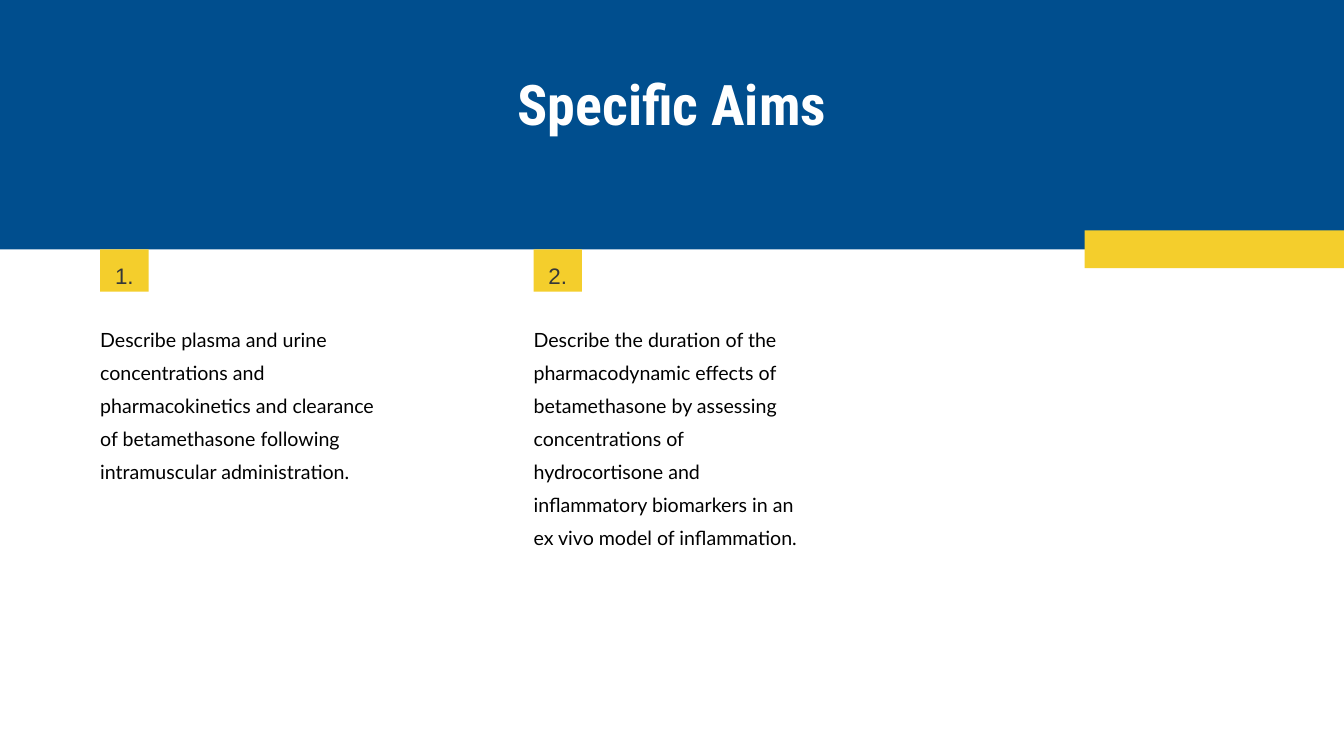
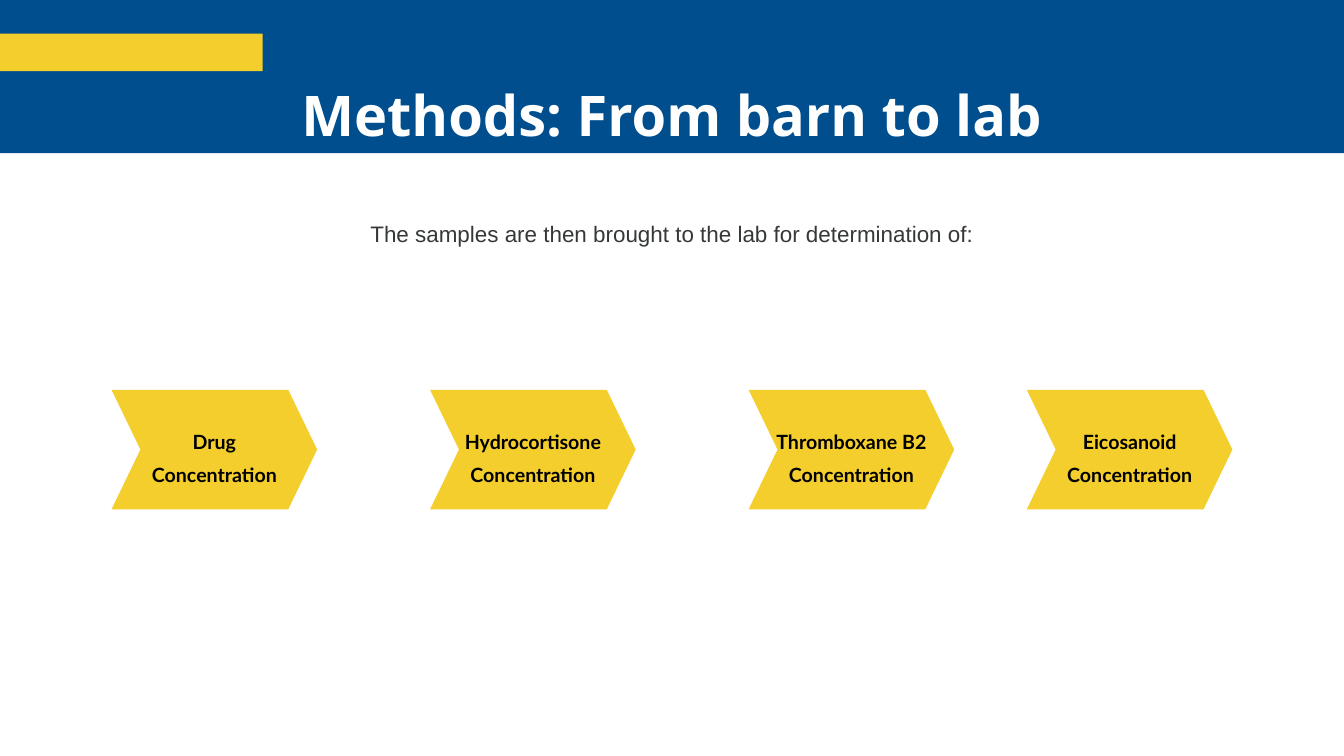
import pptx
import pptx.util
import pptx.dml.color
import pptx.enum.shapes
import pptx.enum.text
from dataclasses import dataclass

Inches = pptx.util.Inches
Shape = pptx.enum.shapes.MSO_SHAPE
Align = pptx.enum.text.PP_ALIGN
Anchor = pptx.enum.text.MSO_ANCHOR
AutoSize = pptx.enum.text.MSO_AUTO_SIZE


@dataclass(frozen=True)
class Theme:
    blue: str = "004E8E"
    yellow: str = "F4CE2C"
    white: str = "FFFFFF"
    black: str = "000000"
    charcoal: str = "353839"
    title_size: int = 60
    lead_size: int = 24
    body_size: int = 21
    lead_font: str = "Arial"
    body_font: str = "Lato"
    line_spacing: float = 1.4


THEME = Theme()
SLIDE_WIDTH, SLIDE_HEIGHT = 20, 11.25
ACCENT_WIDTH, ACCENT_HEIGHT = 3.91, 0.56

TITLE = {"size": THEME.title_size, "bold": True, "color": THEME.white}
LEAD = {"size": THEME.lead_size, "name": THEME.lead_font, "color": THEME.charcoal}
BODY = {"size": THEME.body_size, "name": THEME.body_font, "color": THEME.black}
STEP = {**BODY, "bold": True}

AIMS = [
    (1.49, 2.33, "Describe plasma and urine concentrations and pharmacokinetics "
     "and clearance of betamethasone following intramuscular administration."),
    (7.94, 3.32, "Describe the duration of the pharmacodynamic effects of "
     "betamethasone by assessing concentrations of hydrocortisone and "
     "inflammatory biomarkers in an ex vivo model of inflammation."),
]
ASSAYS = [
    (1.66, "Drug Concentration"),
    (6.4, "Hydrocortisone Concentration"),
    (11.14, "Thromboxane B2 Concentration"),
    (15.28, "Eicosanoid Concentration"),
]


def set_all(target, values):
    for attribute, value in values.items():
        setattr(target, attribute, value)


def write(frame, text, style, inset=0, spacing=THEME.line_spacing,
          align=Align.CENTER, anchor=Anchor.TOP, auto_size=AutoSize.NONE):
    margins = {f"margin_{side}": Inches(inset)
               for side in ("left", "top", "right", "bottom")}
    set_all(frame, {"word_wrap": True, "auto_size": auto_size,
                    "vertical_anchor": anchor, **margins})
    paragraph = frame.paragraphs[0]
    set_all(paragraph, {"alignment": align, "line_spacing": spacing})
    run = paragraph.add_run()
    run.text = text
    font_values = {**style, "size": pptx.util.Pt(style["size"])}
    color = font_values.pop("color")
    set_all(run.font, font_values)
    run.font.color.rgb = pptx.dml.color.RGBColor.from_string(color)


def add_text(slide, box, text, style, **layout):
    frame = slide.shapes.add_textbox(*map(Inches, box)).text_frame
    write(frame, text, style, auto_size=AutoSize.SHAPE_TO_FIT_TEXT, **layout)


def add_block(slide, box, color, outline=Shape.RECTANGLE):
    block = slide.shapes.add_shape(outline, *map(Inches, box))
    block.shadow.inherit = False
    block.fill.solid()
    block.fill.fore_color.rgb = pptx.dml.color.RGBColor.from_string(color)
    block.line.fill.background()
    return block


def add_header(slide, title, title_box, font, spacing, band_height, accent_at):
    add_block(slide, (0, 0, SLIDE_WIDTH, band_height), THEME.blue)
    add_block(slide, (*accent_at, ACCENT_WIDTH, ACCENT_HEIGHT), THEME.yellow)
    add_text(slide, title_box, title, {**TITLE, "name": font}, spacing=spacing)


def add_aim(slide, number, left, height, text):
    badge = add_block(slide, (left, 3.71, 0.72, 0.63), THEME.yellow)
    write(badge.text_frame, f"{number}.", LEAD, inset=0.06, anchor=Anchor.MIDDLE)
    add_text(slide, (left, 4.74, 4.11, height), text, BODY, align=Align.LEFT)


def add_assay(slide, left, label):
    width, height, notch = 3.06, 1.78, 0.43
    chevron = add_block(slide, (left, 5.8, width, height), THEME.yellow, Shape.CHEVRON)
    chevron.adjustments[0] = notch / height
    label_width = 2.28
    label_left = left + (width - label_width) / 2
    add_text(slide, (label_left, 6.26, label_width, 0.85), label, STEP)


def build_aims(slide):
    add_header(slide, "Specific Aims", (3.37, 1.07, 13.26, 1), "Roboto Condensed",
               0.99, band_height=3.71, accent_at=(16.14, 3.43))
    for number, (left, height, text) in enumerate(AIMS, 1):
        add_aim(slide, number, left, height, text)


def build_methods(slide):
    add_header(slide, "Methods: From barn to lab", (1.97, 1.04, 16.05, 1.01),
               "Open Sans", 1.16, band_height=2.28, accent_at=(0, 0.5))
    add_text(slide, (1.97, 3.12, 16.05, 0.4),
             "The samples are then brought to the lab for determination of:", LEAD)
    for left, label in ASSAYS:
        add_assay(slide, left, label)


def main():
    deck = pptx.Presentation()
    set_all(deck, {"slide_width": Inches(SLIDE_WIDTH),
                   "slide_height": Inches(SLIDE_HEIGHT)})
    blank = deck.slide_layouts[6]
    for build in (build_aims, build_methods):
        build(deck.slides.add_slide(blank))
    deck.save("out.pptx")


if __name__ == "__main__":
    main()
